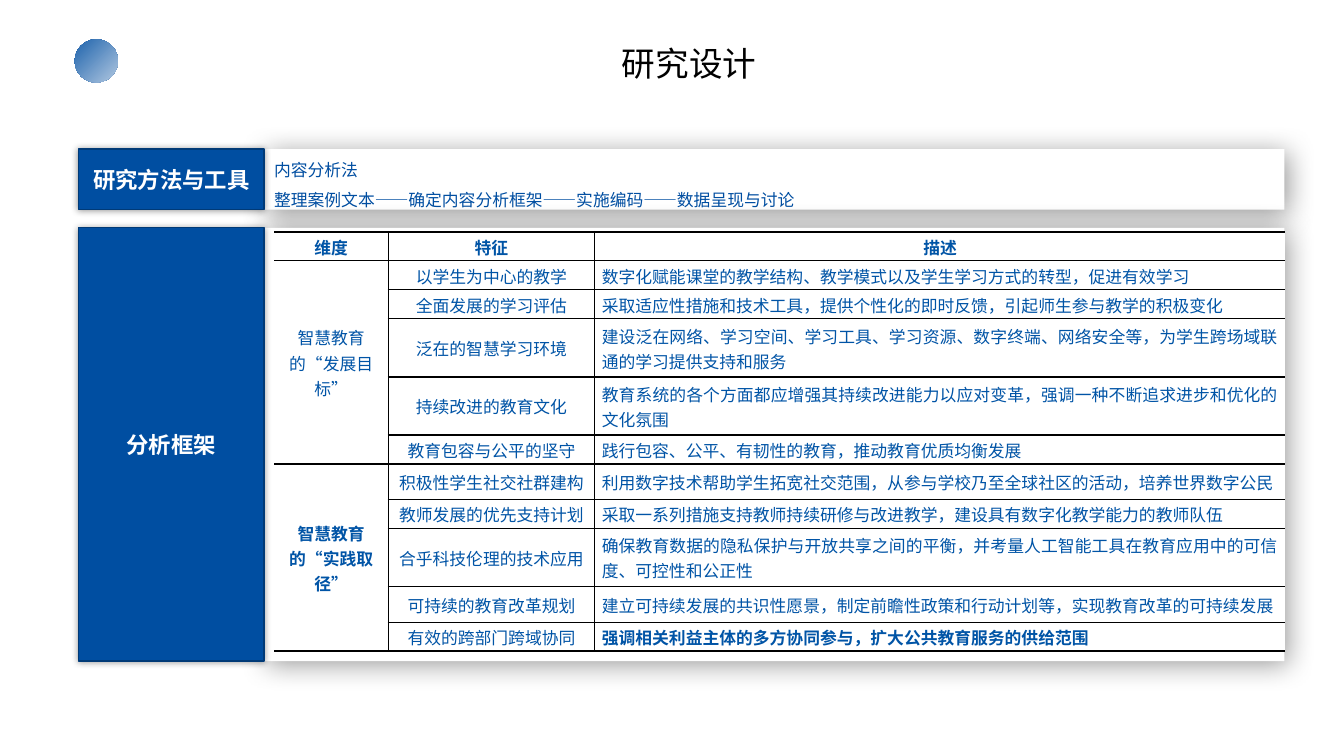
from lxml import etree
from pptx import Presentation
from pptx import util as u
from pptx.dml import color
from pptx.enum import lang, shapes, text
from pptx.oxml import ns

COLORS = {"blue": "004EA1", "edge": "003A77", "table": "0054A6", "pale": "CFDDEC",
          "white": "FFFFFF", "black": "000000"}
SLIDE_WIDTH, SLIDE_HEIGHT = 13.33, 7.5
GRID_COLUMNS, GRID_ROWS = 133.3, 75
CENTER, LEFT, JUSTIFY = text.PP_ALIGN.CENTER, text.PP_ALIGN.LEFT, text.PP_ALIGN.JUSTIFY
MIDDLE = text.MSO_ANCHOR.MIDDLE
PANEL_SHADOW = {"blur": 20, "distance": 3, "angle": 45}
LABEL_SHADOW = {"blur": 5, "distance": 0, "angle": 0}

HEADERS = ("维度", "特征", "描述")
DIMENSIONS = {
    "智慧教育的“发展目标”": (
        ("以学生为中心的教学", "数字化赋能课堂的教学结构、教学模式以及学生学习方式的转型，促进有效学习"),
        ("全面发展的学习评估", "采取适应性措施和技术工具，提供个性化的即时反馈，引起师生参与教学的积极变化"),
        ("泛在的智慧学习环境", "建设泛在网络、学习空间、学习工具、学习资源、数字终端、网络安全等，为学生跨场域联通的学习提供支持和服务"),
        ("持续改进的教育文化", "教育系统的各个方面都应增强其持续改进能力以应对变革，强调一种不断追求进步和优化的文化氛围"),
        ("教育包容与公平的坚守", "践行包容、公平、有韧性的教育，推动教育优质均衡发展"),
    ),
    "智慧教育的“实践取径”": (
        ("积极性学生社交社群建构", "利用数字技术帮助学生拓宽社交范围，从参与学校乃至全球社区的活动，培养世界数字公民"),
        ("教师发展的优先支持计划", "采取一系列措施支持教师持续研修与改进教学，建设具有数字化教学能力的教师队伍"),
        ("合乎科技伦理的技术应用", "确保教育数据的隐私保护与开放共享之间的平衡，并考量人工智能工具在教育应用中的可信度、可控性和公正性"),
        ("可持续的教育改革规划", "建立可持续发展的共识性愿景，制定前瞻性政策和行动计划等，实现教育改革的可持续发展"),
        ("有效的跨部门跨域协同", "强调相关利益主体的多方协同参与，扩大公共教育服务的供给范围"),
    ),
}
BOLD_TEXTS = {*HEADERS, "智慧教育的“实践取径”", "强调相关利益主体的多方协同参与，扩大公共教育服务的供给范围"}
COLUMN_SPANS = (11.3, 20.5, 68.5)
SINGLE, LOOSE, DOUBLE = 2.88, 3.53, 5.76
ROW_SPANS = (SINGLE, SINGLE, SINGLE, DOUBLE, DOUBLE, SINGLE, LOOSE, SINGLE, DOUBLE, LOOSE, SINGLE)


def rgb(name):
    return color.RGBColor.from_string(COLORS[name])


def set_format(target, values):
    for name, value in values.items():
        setattr(target, name, value)


class Deck:
    font = "Noto Sans CJK SC"

    def __init__(self):
        self.presentation = Presentation()
        set_format(self.presentation, {"slide_width": u.Inches(SLIDE_WIDTH),
                                       "slide_height": u.Inches(SLIDE_HEIGHT)})
        self.slide = self.presentation.slides.add_slide(self.presentation.slide_layouts[5])

    def across(self, columns):
        return u.Inches(columns * SLIDE_WIDTH / GRID_COLUMNS)

    def down(self, rows):
        return u.Inches(rows * SLIDE_HEIGHT / GRID_ROWS)

    def box(self, left, top, width, height):
        return self.across(left), self.down(top), self.across(width), self.down(height)

    def fill_text(self, frame, lines, tint, size, bold=False, align=CENTER, spacing=1.0, latin=None):
        set_format(frame, {"word_wrap": True, "vertical_anchor": MIDDLE})
        for index, line in enumerate(lines):
            paragraph = frame.paragraphs[0] if index == 0 else frame.add_paragraph()
            set_format(paragraph, {"alignment": align, "line_spacing": spacing})
            run = paragraph.add_run()
            run.text = line
            set_format(run.font, {"size": u.Pt(size), "bold": bold, "name": latin or self.font,
                                  "language_id": lang.MSO_LANGUAGE_ID.SIMPLIFIED_CHINESE})
            run.font.color.rgb = rgb(tint)
            latin_element = run.font._element.find(ns.qn("a:latin"))
            east_asian = etree.Element(ns.qn("a:ea"), typeface=self.font)
            latin_element.addnext(east_asian)

    def title(self, line, *place):
        shape = self.slide.shapes.title
        set_format(shape, dict(zip(("left", "top", "width", "height"), self.box(*place))))
        self.fill_text(shape.text_frame, [line], "black", 24, spacing=0.9, latin="Times New Roman")

    def disc(self, *place):
        shape = self.slide.shapes.add_shape(shapes.MSO_SHAPE.OVAL, *self.box(*place))
        shape.shadow.inherit = False
        shape.rotation = 45
        shape.line.fill.background()
        shape.fill.gradient()
        shape.fill.gradient_angle = 0
        for stop, tint in zip(shape.fill.gradient_stops, ("blue", "pale")):
            stop.color.rgb = rgb(tint)

    def shade(self, shape, blur, distance, angle):
        shape.shadow.inherit = False
        effects = shape._element.spPr.find(ns.qn("a:effectLst"))
        shadow = etree.SubElement(effects, ns.qn("a:outerShdw"), blurRad=str(u.Pt(blur)),
                                  dist=str(u.Pt(distance)), dir=str(angle * 60000),
                                  algn="ctr", rotWithShape="0")
        tint = etree.SubElement(shadow, ns.qn("a:srgbClr"), val=COLORS["black"])
        etree.SubElement(tint, ns.qn("a:alpha"), val="40000")

    def rectangle(self, group, place, fill, edge, shadow):
        shape = group.shapes.add_shape(shapes.MSO_SHAPE.RECTANGLE, *self.box(*place))
        shape.fill.solid()
        shape.fill.fore_color.rgb = rgb(fill)
        if edge:
            shape.line.color.rgb = rgb(edge)
            shape.line.width = u.Pt(1)
        else:
            shape.line.fill.background()
        self.shade(shape, **shadow)
        return shape

    def section(self, label, top, height, lines=()):
        group = self.slide.shapes.add_group_shape()
        panel = self.rectangle(group, (26.2, top, 101.2, height), "white", None, PANEL_SHADOW)
        self.fill_text(panel.text_frame, lines, "blue", 12, align=LEFT, spacing=1.5)
        tab = self.rectangle(group, (7.8, top, 18.4, height), "blue", "edge", LABEL_SHADOW)
        self.fill_text(tab.text_frame, [label], "white", 16, bold=True)

    def borders(self, cell, widths):
        properties = cell._tc.get_or_add_tcPr()
        for side, width in zip("LRTB", widths):
            line = etree.SubElement(properties, ns.qn(f"a:ln{side}"), w=str(u.Pt(width)))
            if width:
                fill = etree.SubElement(line, ns.qn("a:solidFill"))
                etree.SubElement(fill, ns.qn("a:srgbClr"), val=COLORS["black"])
            else:
                etree.SubElement(line, ns.qn("a:noFill"))

    def table(self, left, top):
        rows, columns = len(ROW_SPANS), len(COLUMN_SPANS)
        place = self.box(left, top, sum(COLUMN_SPANS), sum(ROW_SPANS))
        table = self.slide.shapes.add_table(rows, columns, *place).table
        set_format(table, {"first_row": False, "horz_banding": False})
        for column, span in zip(table.columns, COLUMN_SPANS):
            column.width = self.across(span)
        for row, span in zip(table.rows, ROW_SPANS):
            row.height = self.down(span)
        contents = [HEADERS]
        for dimension, features in DIMENSIONS.items():
            first = len(contents)
            contents += [(dimension if index == 0 else "", *feature)
                         for index, feature in enumerate(features)]
            table.cell(first, 0).merge(table.cell(len(contents) - 1, 0))
        for row, values in enumerate(contents):
            for column, value in enumerate(values):
                cell = table.cell(row, column)
                last_row = row + (cell.span_height if cell.is_merge_origin else 1) == rows
                self.borders(cell, (int(column > 0), int(column < columns - 1),
                                    1.5 if row == 0 else 1, 1.5 if last_row else 1))
                cell.fill.solid()
                cell.fill.fore_color.rgb = rgb("white")
                set_format(cell, {"margin_left": u.Inches(0.07), "margin_right": u.Inches(0.07),
                                  "margin_top": 0, "margin_bottom": 0, "vertical_anchor": MIDDLE})
                if value:
                    align = JUSTIFY if row and column == 2 else CENTER
                    self.fill_text(cell.text_frame, [value], "table", 12, value in BOLD_TEXTS,
                                   align, u.Pt(18))


def main():
    deck = Deck()
    deck.title("研究设计", 9.3, 4.6, 118.1, 3.9)
    deck.disc(7.4, 3.9, 4.3, 4.3)
    deck.section("研究方法与工具", 14.8, 6,
                 ["内容分析法", "整理案例文本——确定内容分析框架——实施编码——数据呈现与讨论"])
    deck.section("分析框架", 22.6, 43)
    deck.table(27.2, 23)
    deck.presentation.save("out.pptx")


if __name__ == "__main__":
    main()
